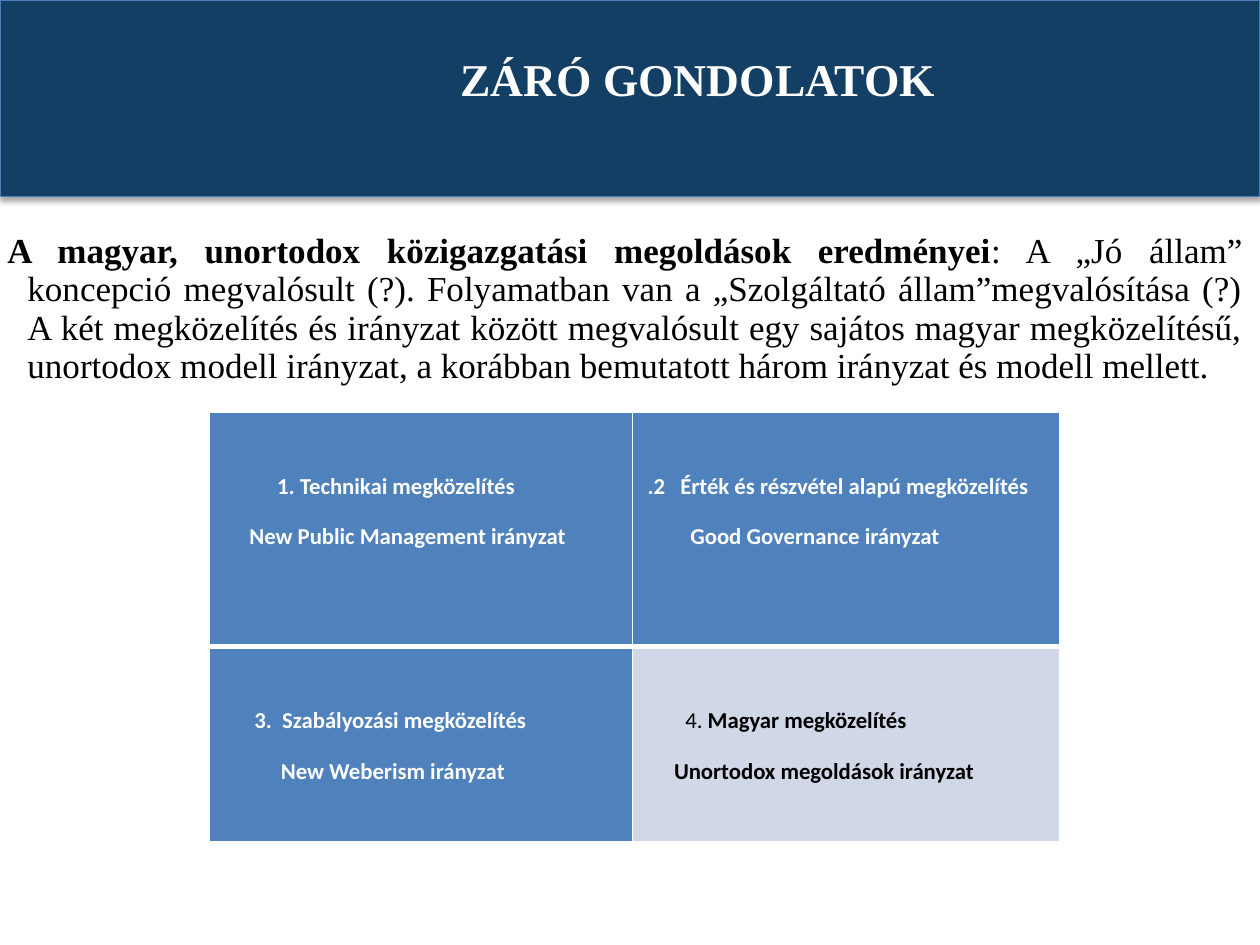
import lxml.etree
import pptx
import pptx.dml.color
import pptx.enum.shapes
import pptx.enum.text
import pptx.oxml
import pptx.oxml.ns
import pptx.util

Inches, Pt = pptx.util.Inches, pptx.util.Pt
RGBColor = pptx.dml.color.RGBColor
ALIGN = pptx.enum.text.PP_ALIGN
qn = pptx.oxml.ns.qn

NAVY = RGBColor(0x13, 0x3F, 0x64)
EDGE = RGBColor(0x4B, 0x7E, 0xBC)
BLUE = RGBColor(0x4F, 0x81, 0xBD)
PALE = RGBColor(0xD0, 0xD8, 0xE8)
WHITE = RGBColor(0xFF, 0xFF, 0xFF)
BLACK = RGBColor(0, 0, 0)

TITLE = "ZÁRÓ GONDOLATOK"
BODY = [
    ("A magyar, unortodox közigazgatási megoldások eredményei", True),
    (": A „Jó állam” koncepció megvalósult (?). Folyamatban van a „Szolgáltató "
     "állam”megvalósítása (?) A két megközelítés és irányzat között megvalósult egy "
     "sajátos magyar megközelítésű, unortodox modell irányzat, a korábban bemutatott "
     "három irányzat és modell mellett.", False),
]
CELLS = [
    [(BLUE, WHITE, [(0.47, 0, [("1. Technikai megközelítés", True)]),
                    (0.25, 0, [("New Public Management irányzat", True)])]),
     (BLUE, WHITE, [(0.05, 0.26, [(".2\tÉrték és részvétel alapú megközelítés", True)]),
                    (0.39, 0, [("Good Governance irányzat", True)])])],
    [(BLUE, WHITE, [(0.29, 0.22, [("3.\tSzabályozási megközelítés", True)]),
                    (0.5, 0, [("New Weberism irányzat", True)])]),
     (PALE, BLACK, [(0.35, 0, [("4. ", False), ("Magyar megközelítés", True)]),
                    (0.26, 0, [("Unortodox megoldások irányzat", True)])])],
]
BORDERS = {"lnL": 1, "lnR": 1, "lnT": 1, "lnB": 1}


def apply(obj, values):
    """Set each attribute named in a dict of format values."""
    for name, value in values.items():
        setattr(obj, name, value)


def add_runs(p, runs, size, name, color):
    """Add (text, bold) runs to a paragraph in one font."""
    for text, bold in runs:
        r = p.add_run()
        r.text = text
        apply(r.font, {"size": Pt(size), "name": name, "bold": bold})
        r.font.color.rgb = color


def set_indent(p, margin, first):
    """Set the left margin and first-line indent of a paragraph in inches."""
    pPr = p._p.get_or_add_pPr()
    pPr.set("marL", str(Inches(margin)))
    pPr.set("indent", str(Inches(first)))


def add_header(s, x, y, w, h):
    """Place the shadowed band and the title upon it."""
    band = s.shapes.add_shape(pptx.enum.shapes.MSO_SHAPE.RECTANGLE,
                              Inches(x), Inches(y), Inches(w), Inches(h))
    band.fill.solid()
    band.fill.fore_color.rgb = NAVY
    band.line.color.rgb = EDGE
    band.line.width = Pt(0.75)
    band.shadow.inherit = False
    effects = band.element.spPr.find(qn("a:effectLst"))
    shadow = lxml.etree.SubElement(effects, qn("a:outerShdw"), blurRad=str(Pt(3.1)),
                                   dist=str(Pt(1.8)), dir="5400000", rotWithShape="0")
    color = lxml.etree.SubElement(shadow, qn("a:srgbClr"), val="000000")
    lxml.etree.SubElement(color, qn("a:alpha"), val="35000")

    title = s.shapes.title
    title.element.addprevious(band.element)
    apply(title, {"left": Inches(x + 1.5), "top": Inches(y + 0.38),
                  "width": Inches(w - 1.92), "height": Inches(0.65)})
    tf = title.text_frame
    apply(tf, {"margin_left": 0, "margin_right": 0, "margin_top": 0,
               "margin_bottom": Inches(0.16), "word_wrap": True,
               "auto_size": pptx.enum.text.MSO_AUTO_SIZE.NONE,
               "vertical_anchor": pptx.enum.text.MSO_ANCHOR.MIDDLE})
    p = tf.paragraphs[0]
    p.alignment = ALIGN.CENTER
    add_runs(p, [(TITLE, True)], 26, "Times New Roman", WHITE)


def add_body(s, x, y, w, h):
    """Place the justified paragraph with a hanging first line."""
    tf = s.shapes.add_textbox(Inches(x), Inches(y), Inches(w), Inches(h)).text_frame
    tf.word_wrap = True
    p = tf.paragraphs[0]
    set_indent(p, 0.16, -0.16)
    apply(p, {"alignment": ALIGN.JUSTIFY, "line_spacing": Pt(22)})
    add_runs(p, BODY, 20, "Times New Roman", BLACK)


def fill_cell(cell, fill, color, lines, borders):
    """Format one table cell and write its indented lines."""
    apply(cell, {"margin_left": Inches(0.07), "margin_right": Inches(0.07),
                 "margin_top": Inches(0.48), "margin_bottom": 0})
    tcPr = cell._tc.get_or_add_tcPr()
    for tag, width in borders.items():
        ln = lxml.etree.SubElement(tcPr, qn(f"a:{tag}"), w=str(Pt(width)))
        solid = lxml.etree.SubElement(ln, qn("a:solidFill"))
        lxml.etree.SubElement(solid, qn("a:srgbClr"), val=str(WHITE))
    cell.fill.solid()
    cell.fill.fore_color.rgb = fill
    tf = cell.text_frame
    for i, (start, hang, runs) in enumerate(lines):
        p = tf.add_paragraph() if i else tf.paragraphs[0]
        set_indent(p, start + hang, -hang)
        apply(p, {"alignment": ALIGN.LEFT, "space_before": Pt(13.2 if i else 0)})
        add_runs(p, runs, 13, "Calibri", color)


def add_matrix(s, x, y, w, h):
    """Place the two-by-two table of approaches."""
    table = s.shapes.add_table(2, 2, Inches(x), Inches(y), Inches(w), Inches(h)).table
    for col, width in zip(table.columns, (3.36, w - 3.36)):
        col.width = Inches(width)
    for row, height in zip(table.rows, (1.86, h - 1.86)):
        row.height = Inches(height)
    for i, row in enumerate(CELLS):
        edge = {"lnT": 3} if i else {"lnB": 3}
        for j, (fill, color, lines) in enumerate(row):
            fill_cell(table.cell(i, j), fill, color, lines, {**BORDERS, **edge})


def main():
    """Build and save the slide."""
    prs = pptx.Presentation()
    prs.slide_width, prs.slide_height = Inches(10), Inches(7.5)
    s = prs.slides.add_slide(prs.slide_layouts[5])
    add_header(s, 0, 0, 10, 1.56)
    add_body(s, -0.04, 1.79, 10, 5.23)
    add_matrix(s, 1.66, 3.27, 6.75, 3.41)
    prs.save("out.pptx")


if __name__ == "__main__":
    main()
